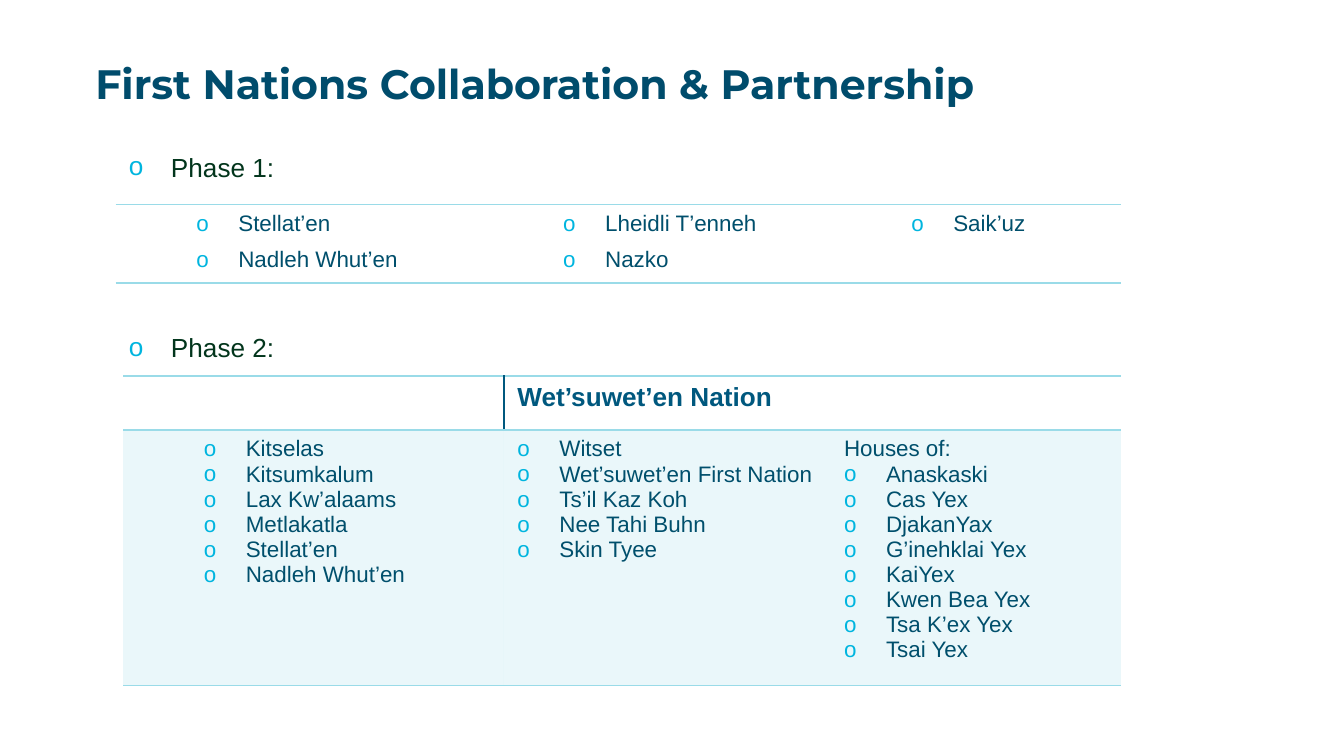
from lxml.etree import SubElement
from pptx import Presentation
from pptx.dml.color import RGBColor
from pptx.oxml.ns import qn
from pptx.util import Pt

HUES = {"title": "004C6C", "phase": "02351C", "body": "004F6C",
        "head": "00587E", "dot": "00B5DF", "rule": "9ADBE8"}
PLAIN = "{2D5ABB26-0587-4C30-8999-92F81FD0307C}"  # no style, no grid
STEP, DEEP = 22.5, 58.5  # hanging indent, second-level indent

TITLE = "First Nations Collaboration & Partnership"
PHASES = [("Phase 1:", 77.5), ("Phase 2:", 174)]
FIRST = [["Stellat’en", "Nadleh Whut’en"],
         ["Lheidli T’enneh", "Nazko"],
         ["Saik’uz"]]
NATION = "Wet’suwet’en Nation"
HOUSES = "Houses of:"
SECOND = [
    (DEEP, ["Kitselas", "Kitsumkalum", "Lax Kw’alaams", "Metlakatla",
            "Stellat’en", "Nadleh Whut’en"]),
    (STEP, ["Witset", "Wet’suwet’en First Nation", "Ts’il Kaz Koh",
            "Nee Tahi Buhn", "Skin Tyee"]),
    (STEP, [HOUSES, "Anaskaski", "Cas Yex", "DjakanYax", "G’inehklai Yex",
            "KaiYex", "Kwen Bea Yex", "Tsa K’ex Yex", "Tsai Yex"]),
]


def write(para, text, size, hue, face="Arial", bold=False):
    run = para.add_run()
    run.text = text
    font = run.font
    font.size, font.name, font.bold = Pt(size), face, bold
    font.color.rgb = RGBColor.from_string(HUES[hue])


def bullet(para, left):
    props = para._p.get_or_add_pPr()
    props.set("marL", str(Pt(left)))
    props.set("indent", str(-Pt(STEP)))
    tint = SubElement(props, qn("a:buClr"))
    SubElement(tint, qn("a:srgbClr"), val=HUES["dot"])
    SubElement(props, qn("a:buFont"), typeface="Arial")
    SubElement(props, qn("a:buChar"), char="o")


def fill_list(frame, names, left, gap=0):
    for i, name in enumerate(names):
        para = frame.add_paragraph() if i else frame.paragraphs[0]
        if name != HOUSES:
            bullet(para, left)
        if gap:
            para.space_after = Pt(gap)
            if i:
                para.space_before = Pt(gap)
        write(para, name, 12, "body")


def edge(cell, **sides):
    """Draw cell borders; name the sides in the order L, R, T, B."""
    props = cell._tc.get_or_add_tcPr()
    for side, hue in sides.items():
        line = SubElement(props, qn("a:ln" + side), w=str(Pt(1)))
        paint = SubElement(line, qn("a:solidFill"))
        SubElement(paint, qn("a:srgbClr"), val=HUES[hue])


def shade(cell, hue, alpha):
    cell.fill.solid()
    cell.fill.fore_color.rgb = RGBColor.from_string(HUES[hue])
    tint = cell._tc.tcPr.find(qn("a:solidFill")).find(qn("a:srgbClr"))
    SubElement(tint, qn("a:alpha"), val=str(alpha * 1000))


def add_box(slide, left, top, width, height):
    box = slide.shapes.add_textbox(Pt(left), Pt(top), Pt(width), Pt(height))
    box.text_frame.word_wrap = True
    return box.text_frame.paragraphs[0]


def add_grid(slide, left, top, cols, rows):
    frame = slide.shapes.add_table(len(rows), len(cols), Pt(left), Pt(top),
                                   Pt(sum(cols)), Pt(sum(rows)))
    grid = frame.table
    grid.first_row = grid.horz_banding = False
    grid._tbl.tblPr.find(qn("a:tableStyleId")).text = PLAIN
    for col, width in zip(grid.columns, cols):
        col.width = Pt(width)
    for row, height in zip(grid.rows, rows):
        row.height = Pt(height)
    return grid


def main():
    deck = Presentation()
    deck.slide_width, deck.slide_height = Pt(720), Pt(405)
    slide = deck.slides.add_slide(deck.slide_layouts[6])

    write(add_box(slide, 44, 28, 620, 61), TITLE, 22, "title",
          "Montserrat", True)

    for text, top in PHASES:
        para = add_box(slide, 62, top, 566, 24.5)
        bullet(para, STEP)
        write(para, text, 14, "phase")

    grid = add_grid(slide, 62, 109.5, [196.5, 186.5, 155.5], [40])
    for i, names in enumerate(FIRST):
        cell = grid.cell(0, i)
        fill_list(cell.text_frame, names, DEEP, 3)
        edge(cell, T="rule", B="rule")

    grid = add_grid(slide, 66, 201.5, [204, 175, 155.5], [27.8, 128])
    head = grid.cell(0, 1)
    head.merge(grid.cell(0, 2))
    write(head.text_frame.paragraphs[0], NATION, 14, "head", bold=True)
    edge(grid.cell(0, 0), R="head", T="rule", B="rule")
    edge(head, L="head", T="rule", B="rule")
    edge(grid.cell(0, 2), T="rule", B="rule")
    for i, (left, names) in enumerate(SECOND):
        cell = grid.cell(1, i)
        fill_list(cell.text_frame, names, left)
        edge(cell, T="rule", B="rule")
        shade(cell, "rule", 20)

    deck.save("out.pptx")


if __name__ == "__main__":
    main()
